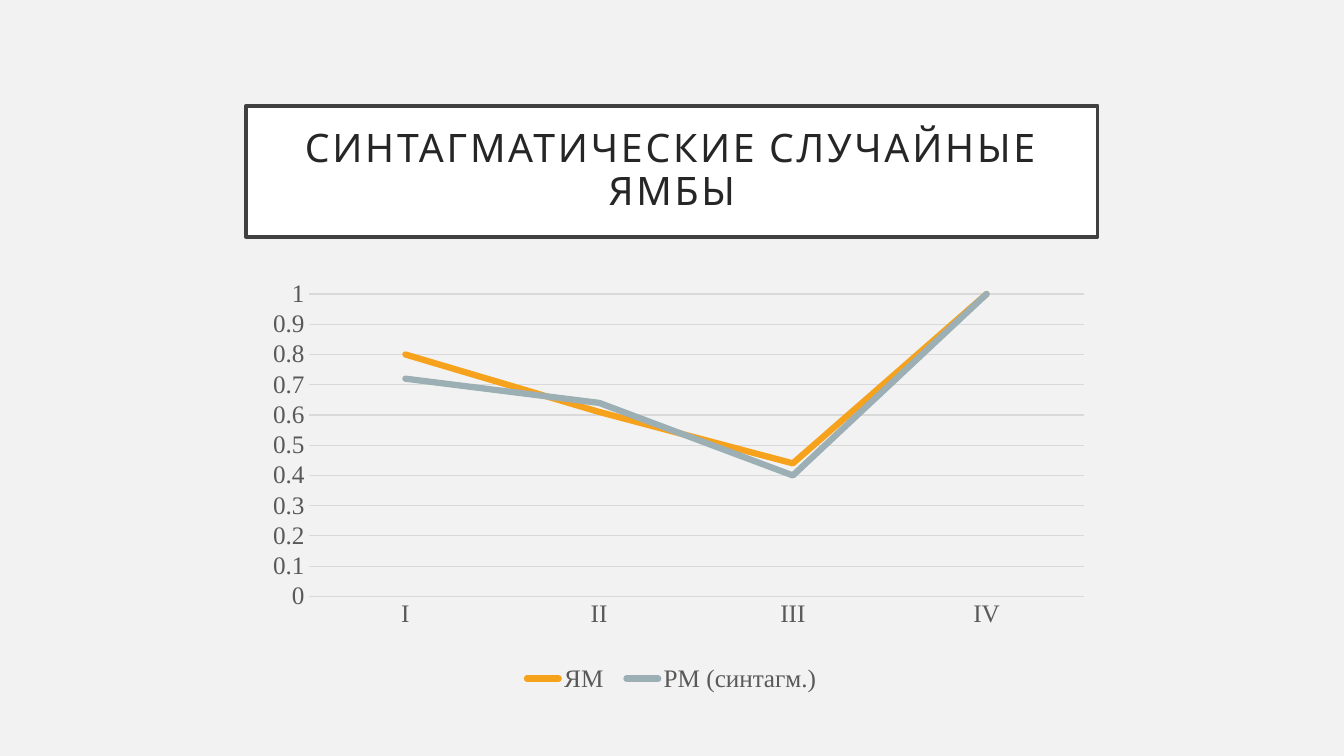
import pptx
import pptx.chart.data
import pptx.dml.color
import pptx.enum.chart
import pptx.enum.shapes
import pptx.enum.text
import pptx.oxml
import pptx.oxml.ns
import pptx.util

Pt = pptx.util.Pt
rgb = pptx.dml.color.RGBColor.from_string
qn = pptx.oxml.ns.qn

# Content
TITLE = "СИНТАГМАТИЧЕСКИЕ СЛУЧАЙНЫЕ ЯМБЫ"
FEET = ["I", "II", "III", "IV"]
SERIES = [
    ("ЯМ ", (0.8, 0.61, 0.44, 1), "F6A21D"),
    ("РМ (синтагм.) ", (0.72, 0.64, 0.4, 1), "9BAFB5"),
]

# Theme and layout, in points
THEME = {
    "background": "F2F2F2", "panel": "FFFFFF", "border": "404040",
    "title": "262626", "label": "595959", "grid": "D9D9D9",
    "title_font": "Cabin", "chart_font": "Times New Roman",
    "title_size": 28, "chart_size": 18,
}
SLIDE_SIZE = (960, 540)
TITLE_BOX = (175.7, 75.6, 608.4, 93.6)
TITLE_INSET = 14.4
CHART_BOX = (177.8, 198, 608.4, 300.2)
PLOT = {"x": 0.07, "y": 0.04, "w": 0.91, "h": 0.72}


def style_font(font, name, size, color):
    font.name = name
    font.size = Pt(size)
    font.color.rgb = rgb(color)


def style_line(line, color, width):
    line.color.rgb = rgb(color)
    line.width = Pt(width)


def add_title(slide):
    s = slide.shapes.add_shape(pptx.enum.shapes.MSO_SHAPE.RECTANGLE, *map(Pt, TITLE_BOX))
    s.shadow.inherit = False
    s.fill.solid()
    s.fill.fore_color.rgb = rgb(THEME["panel"])
    style_line(s.line, THEME["border"], 2.5)
    tf = s.text_frame
    tf.word_wrap = True
    tf.vertical_anchor = pptx.enum.text.MSO_ANCHOR.MIDDLE
    tf.margin_left = tf.margin_right = tf.margin_top = tf.margin_bottom = Pt(TITLE_INSET)
    p = tf.paragraphs[0]
    p.alignment = pptx.enum.text.PP_ALIGN.CENTER
    p.line_spacing = 0.9
    style_font(p.font, THEME["title_font"], THEME["title_size"], THEME["title"])
    r = p.add_run()
    r.text = TITLE
    r.font._element.set("spc", "200")  # letter spacing, hundredths of a point


def set_plot_area(chart):
    area = chart._chartSpace.find(".//" + qn("c:plotArea"))
    for old in area.findall(qn("c:layout")):
        area.remove(old)
    modes = '<c:layoutTarget val="inner"/><c:xMode val="edge"/><c:yMode val="edge"/>'
    sizes = "".join(f'<c:{key} val="{value}"/>' for key, value in PLOT.items())
    area.insert(0, pptx.oxml.parse_xml(
        f'<c:layout {pptx.oxml.ns.nsdecls("c")}>'
        f"<c:manualLayout>{modes}{sizes}</c:manualLayout></c:layout>"))


def add_line_chart(slide):
    data = pptx.chart.data.CategoryChartData()
    data.categories = FEET
    for name, values, _ in SERIES:
        data.add_series(name, values)
    chart = slide.shapes.add_chart(
        pptx.enum.chart.XL_CHART_TYPE.LINE, *map(Pt, CHART_BOX), data).chart
    chart.has_title = False
    set_plot_area(chart)

    # Legend
    chart.has_legend = True
    chart.legend.position = pptx.enum.chart.XL_LEGEND_POSITION.BOTTOM
    chart.legend.include_in_layout = False

    # Axes
    for axis in (chart.category_axis, chart.value_axis):
        axis.major_tick_mark = axis.minor_tick_mark = pptx.enum.chart.XL_TICK_MARK.NONE
    for part in (chart, chart.legend, chart.category_axis.tick_labels,
                 chart.value_axis.tick_labels):
        style_font(part.font, THEME["chart_font"], THEME["chart_size"], THEME["label"])
    style_line(chart.category_axis.format.line, THEME["grid"], 0.75)
    value_axis = chart.value_axis
    value_axis.minimum_scale, value_axis.maximum_scale = 0, 1
    value_axis.major_unit = 0.1
    value_axis.format.line.fill.background()
    value_axis.has_major_gridlines = True
    style_line(value_axis.major_gridlines.format.line, THEME["grid"], 0.75)

    # Series
    for series, (_, _, color) in zip(chart.plots[0].series, SERIES):
        series.smooth = False
        series.marker.style = pptx.enum.chart.XL_MARKER_STYLE.NONE
        style_line(series.format.line, color, 4.5)
        series.format.line._get_or_add_ln().set("cap", "rnd")


def main():
    prs = pptx.Presentation()
    prs.slide_width, prs.slide_height = map(Pt, SLIDE_SIZE)
    slide = prs.slides.add_slide(prs.slide_layouts[6])
    slide.background.fill.solid()
    slide.background.fill.fore_color.rgb = rgb(THEME["background"])
    add_title(slide)
    add_line_chart(slide)
    prs.save("out.pptx")


if __name__ == "__main__":
    main()
